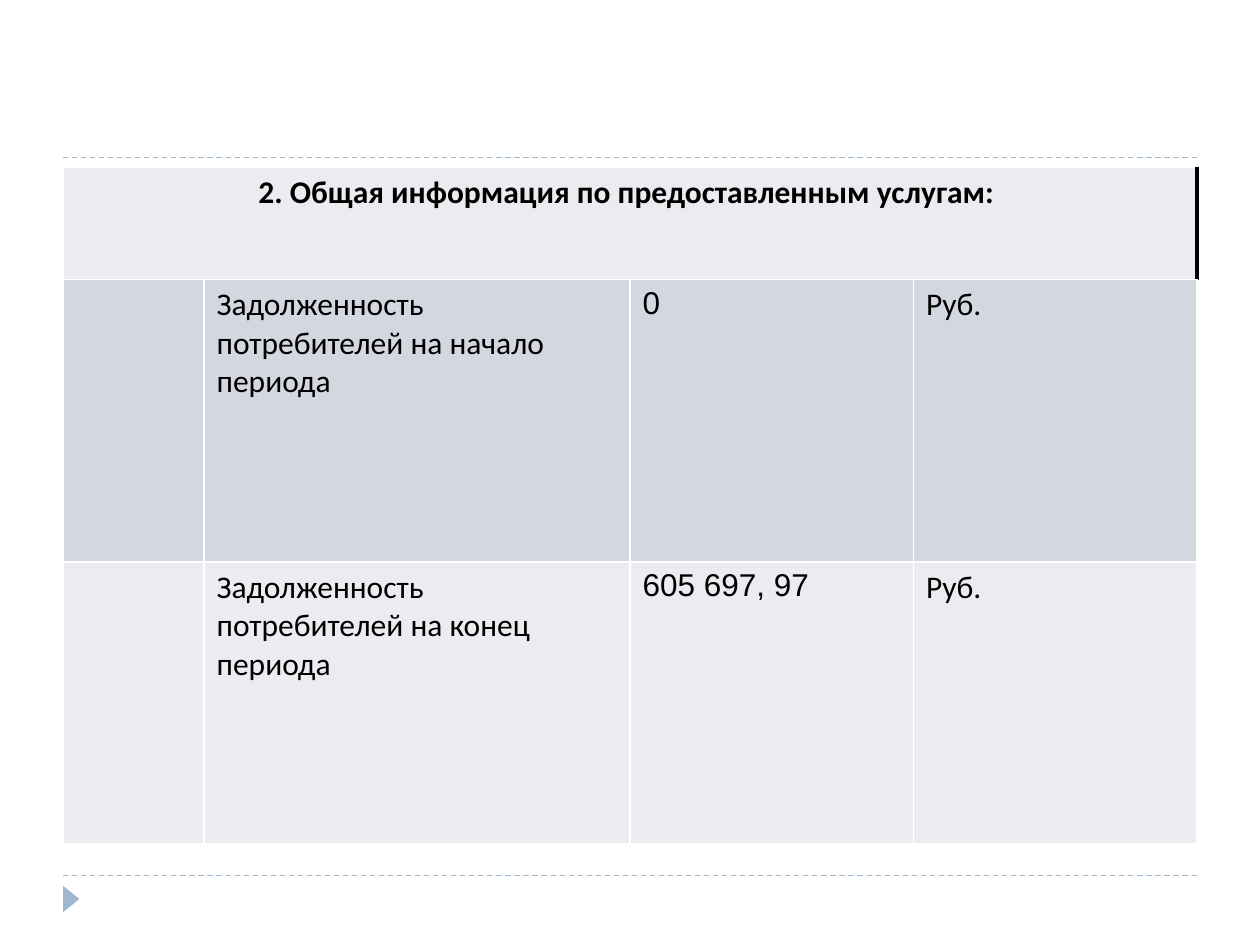
from lxml import etree
from pptx import Presentation
from pptx.dml.color import RGBColor
from pptx.enum.dml import MSO_LINE
from pptx.enum.shapes import MSO_CONNECTOR, MSO_SHAPE
from pptx.enum.text import PP_ALIGN
from pptx.oxml.ns import qn
from pptx.util import Inches, Pt

STRAIGHT = MSO_CONNECTOR.STRAIGHT
TRIANGLE = MSO_SHAPE.ISOSCELES_TRIANGLE
DASH = MSO_LINE.DASH
CENTER = PP_ALIGN.CENTER

ACCENT = RGBColor(0x9F, 0xB8, 0xCD)
LIGHT_BAND = RGBColor(0xEB, 0xEC, 0xF0)
DARK_BAND = RGBColor(0xD5, 0xD7, 0xE0)
BLACK = RGBColor(0, 0, 0)
WHITE = RGBColor(0xFF, 0xFF, 0xFF)

LEFT = 0.5
WIDTH = 9
COLUMN_WIDTHS = (1.12, 3.38, 2.25, 2.25)
ROW_HEIGHTS = (0.89, 2.24, 2.24)
COLUMN_FONTS = ("Calibri", "Calibri", "Arial", "Calibri")
HEADING = "2. Общая информация по предоставленным услугам: "
DEBT_ROWS = (
    ("", "Задолженность потребителей на начало периода", "0", "Руб."),
    ("", "Задолженность потребителей на конец периода", "605 697, 97", "Руб."),
)


def add_dashed_rule(slide, top):
    rule = slide.shapes.add_connector(
        STRAIGHT, Inches(LEFT), Inches(top), Inches(LEFT + WIDTH), Inches(top)
    )
    rule.line.color.rgb = ACCENT
    rule.line.width = Pt(0.75)
    rule.line.dash_style = DASH
    properties = rule._element.find(qn("p:spPr"))
    etree.SubElement(properties, qn("a:effectLst"))


def add_marker(slide):
    marker = slide.shapes.add_shape(
        TRIANGLE, Inches(0.46), Inches(7.07), Inches(0.21), Inches(0.13)
    )
    marker.rotation = 90
    marker.shadow.inherit = False
    marker.fill.solid()
    marker.fill.fore_color.rgb = ACCENT
    marker.line.fill.background()


def set_borders(cell, right_color=WHITE, right_width=1):
    properties = cell._tc.get_or_add_tcPr()
    for side in ("L", "R", "T", "B"):
        color, width = (right_color, right_width) if side == "R" else (WHITE, 1)
        border = etree.SubElement(properties, qn(f"a:ln{side}"), w=str(Pt(width)))
        fill = etree.SubElement(border, qn("a:solidFill"))
        etree.SubElement(fill, qn("a:srgbClr"), val=str(color))


def fill_cell(cell, color):
    cell.fill.solid()
    cell.fill.fore_color.rgb = color


def write_cell(cell, text, font_name, bold=False):
    cell.text_frame.text = text
    for run in cell.text_frame.paragraphs[0].runs:
        run.font.name = font_name
        run.font.size = Pt(18)
        run.font.bold = bold
        run.font.color.rgb = BLACK


def add_debt_table(slide):
    table = slide.shapes.add_table(
        len(ROW_HEIGHTS), len(COLUMN_WIDTHS),
        Inches(LEFT), Inches(1.33), Inches(WIDTH), Inches(sum(ROW_HEIGHTS)),
    ).table
    table.first_row = False
    table.horz_banding = False
    for column, width in zip(table.columns, COLUMN_WIDTHS):
        column.width = Inches(width)
    for row, height in zip(table.rows, ROW_HEIGHTS):
        row.height = Inches(height)

    heading = table.cell(0, 0)
    last_column = len(COLUMN_WIDTHS) - 1
    heading.merge(table.cell(0, last_column))
    write_cell(heading, HEADING, "Calibri", bold=True)
    heading.text_frame.paragraphs[0].alignment = CENTER
    for column_index in range(len(COLUMN_WIDTHS)):
        cell = table.cell(0, column_index)
        if column_index in (0, last_column):
            set_borders(cell, BLACK, 2.25)
        else:
            set_borders(cell)
        fill_cell(cell, LIGHT_BAND)

    for row_index, texts in enumerate(DEBT_ROWS, start=1):
        band = DARK_BAND if row_index % 2 else LIGHT_BAND
        for column_index, text in enumerate(texts):
            cell = table.cell(row_index, column_index)
            set_borders(cell)
            fill_cell(cell, band)
            if text:
                write_cell(cell, text, COLUMN_FONTS[column_index])


def main():
    presentation = Presentation()
    presentation.slide_width = Inches(10)
    presentation.slide_height = Inches(7.5)
    slide = presentation.slides.add_slide(presentation.slide_layouts[6])
    for top in (6.95, 1.25):
        add_dashed_rule(slide, top)
    add_marker(slide)
    add_debt_table(slide)
    presentation.save("out.pptx")


if __name__ == "__main__":
    main()
